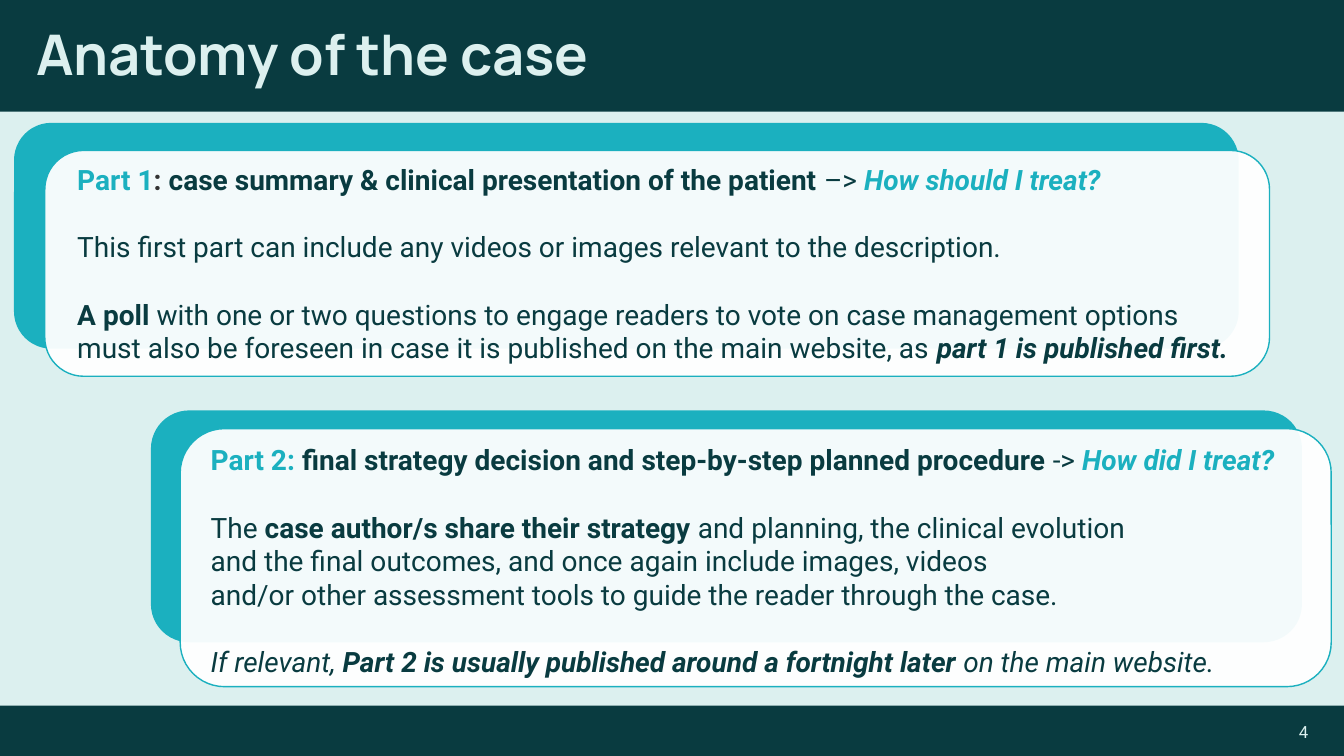
from lxml.etree import SubElement
from pptx import Presentation
from pptx.dml.color import RGBColor
from pptx.enum.shapes import MSO_SHAPE as Shape
from pptx.enum.text import MSO_ANCHOR as Anchor, PP_ALIGN as Align
from pptx.oxml.ns import qn
from pptx.util import Pt

COLOURS = {"dark": "093B40", "pale": "DCF0EF", "teal": "1BB0BF",
           "grey": "333333", "white": "FFFFFF"}
LINE_GAP = 24

PART_1 = [
    [("Part 1", "teal", "b"), (": ", "grey", "b"),
     ("case summary & clinical presentation of the patient", "dark", "b"),
     (" –> ", "dark", ""), ("How should I treat?", "teal", "bi")],
    [("This first part can include any videos or images relevant to the description.",
      "dark", "")],
    [("A poll ", "dark", "b"),
     ("with one or two questions to engage readers to vote on case management options "
      "must also be foreseen in case it is published on the main website, as ", "dark", ""),
     ("part 1 is published first.", "dark", "bi")],
]
PART_2 = [
    [("Part 2: ", "teal", "b"),
     ("final strategy decision and step-by-step planned procedure ", "dark", "b"),
     ("-> ", "dark", ""), ("How did I treat?", "teal", "bi")],
    [("The ", "dark", ""), ("case author/s share their strategy ", "dark", "b"),
     ("and planning, the clinical evolution\n"
      "and the final outcomes, and once again include images, videos\n"
      "and/or other assessment tools to guide the reader through the case.", "dark", "")],
    [("If relevant, ", "dark", "i"),
     ("Part 2 is usually published around a fortnight later ", "dark", "bi"),
     ("on the main website.", "dark", "i")],
]


def colour(key):
    """Return the named colour."""
    return RGBColor.from_string(COLOURS[key])


def style(font, size, key, flags="", face="Roboto"):
    """Set face, size, colour, bold and italic on a font."""
    font.name, font.size = face, Pt(size)
    font.bold, font.italic = "b" in flags, "i" in flags
    font.color.rgb = colour(key)


def add_panel(slide, box, fill, kind=Shape.RECTANGLE, rounding=None, outline=None, opacity=None):
    """Draw a filled panel, optionally rounded, outlined and see-through."""
    panel = slide.shapes.add_shape(kind, *map(Pt, box))
    panel.shadow.inherit = False
    panel.fill.solid()
    panel.fill.fore_color.rgb = colour(fill)
    if rounding:
        panel.adjustments[0] = rounding
    if outline:
        panel.line.color.rgb = colour(outline)
        panel.line.width = Pt(1)
    else:
        panel.line.fill.background()
    if opacity:
        tint = panel._element.spPr.find(qn("a:solidFill"))[0]
        SubElement(tint, qn("a:alpha"), val=str(opacity * 1000))


def add_frame(slide, box, inset=None):
    """Add a wrapping, vertically centred text box and return its frame."""
    frame = slide.shapes.add_textbox(*map(Pt, box)).text_frame
    frame.word_wrap = True
    frame.vertical_anchor = Anchor.MIDDLE
    if inset is not None:
        frame.margin_left = frame.margin_right = Pt(inset)
        frame.margin_top = frame.margin_bottom = Pt(inset)
    return frame


def add_label(slide, box, text, size, face="Roboto", flags="", align=Align.LEFT, spacing=1.0):
    """Add a single line of text in the pale colour."""
    frame = add_frame(slide, box)
    frame.text = text
    line = frame.paragraphs[0]
    line.alignment, line.line_spacing = align, spacing
    style(line.runs[0].font, size, "pale", flags, face)


def add_story(slide, box, paragraphs):
    """Add paragraphs of mixed runs, one line apart."""
    frame = add_frame(slide, box, 5.76)
    for index, pieces in enumerate(paragraphs):
        paragraph = frame.add_paragraph() if index else frame.paragraphs[0]
        if index:
            paragraph.space_before = Pt(LINE_GAP)
        for text, key, flags in pieces:
            for row, words in enumerate(text.split("\n")):
                if row:
                    paragraph.add_line_break()
                run = paragraph.add_run()
                run.text = words
                style(run.font, 20, key, flags)


def add_card(slide, back, front, story_box, paragraphs):
    """Stack a white card over a teal one and write its story."""
    add_panel(slide, back, "teal", Shape.ROUNDED_RECTANGLE, 0.165)
    add_panel(slide, front, "white", Shape.ROUNDED_RECTANGLE, 0.172, "teal", 95)
    add_story(slide, story_box, paragraphs)


def main():
    """Build the slide and save it."""
    deck = Presentation()
    deck.slide_width, deck.slide_height = Pt(960), Pt(540)
    slide = deck.slides.add_slide(deck.slide_layouts[6])
    slide.background.fill.solid()
    slide.background.fill.fore_color.rgb = colour("pale")

    add_panel(slide, (0, 504, 960, 36), "dark")
    add_panel(slide, (0, 0, 960, 79.7), "dark")
    add_label(slide, (18.7, 10.8, 922.3, 59.8), "Anatomy of the case", 40,
              "Manrope", "b", spacing=0.9)
    add_label(slide, (678.2, 511.2, 263.5, 22.3), "4", 12, align=Align.RIGHT)

    add_card(slide, (10, 87.8, 874.8, 161.3), (32, 107.5, 874.8, 161.3),
             (49.4, 112.3, 834.5, 151.9), PART_1)
    add_card(slide, (107.8, 293.2, 822.2, 165.6), (128.7, 306.2, 822.2, 184.3),
             (144.7, 341.3, 784.1, 118.1), PART_2)
    deck.save("out.pptx")


if __name__ == "__main__":
    main()
